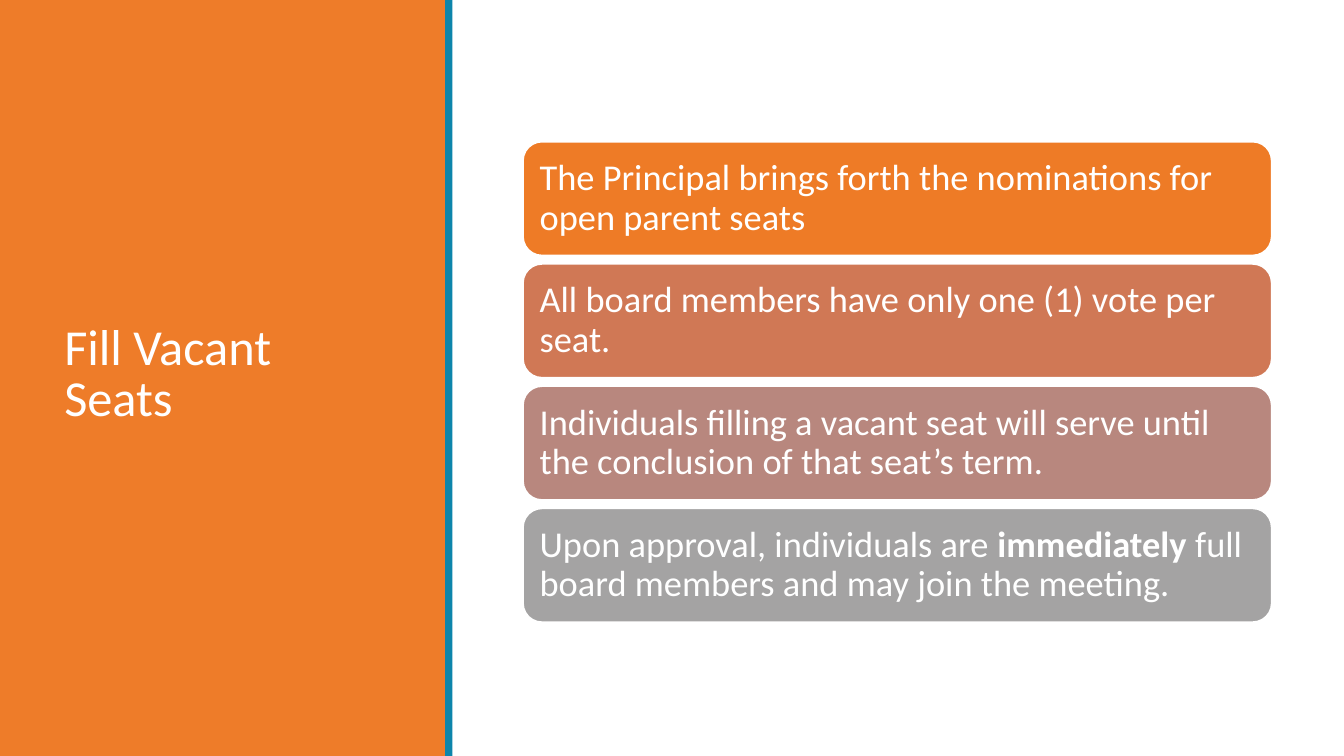
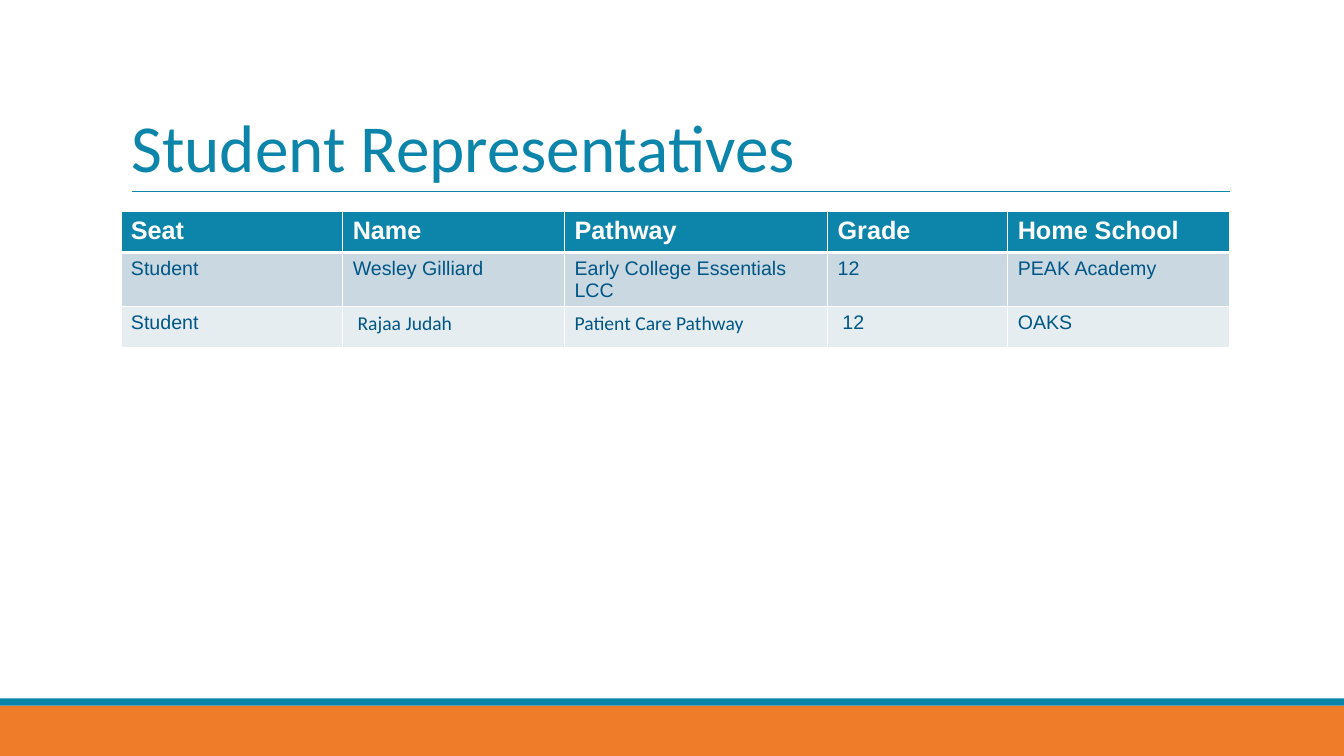
import pptx
import pptx.dml.color
import pptx.enum.shapes
import pptx.enum.text
import pptx.oxml
import pptx.oxml.ns
import pptx.util

Cm = pptx.util.Cm
Pt = pptx.util.Pt
Anchor = pptx.enum.text.MSO_ANCHOR
Shape = pptx.enum.shapes.MSO_SHAPE

SLIDE_WIDTH, SLIDE_HEIGHT = 33.87, 19.05
TITLE_ONLY = 5
COLORS = {
    "orange": "EE7C29",
    "teal": "0D85AB",
    "white": "FFFFFF",
    "table text": "005685",
    "dark row": "CAD8E2",
    "light row": "E6EDF1",
    "card 1": "EE7B26",
    "card 2": "D07855",
    "card 3": "B8877E",
    "card 4": "A4A3A3",
}


def rgb(name):
    return pptx.dml.color.RGBColor.from_string(COLORS[name])


def write_text(frame, text, size=18, color="white", font="Calibri", bold=False,
               spacing=1.0, anchor=Anchor.TOP, margins=(0.25, 0.13)):
    """Write one paragraph; words between asterisks are bold."""
    frame.word_wrap = True
    frame.vertical_anchor = anchor
    frame.margin_left = frame.margin_right = Cm(margins[0])
    frame.margin_top = frame.margin_bottom = Cm(margins[1])
    paragraph = frame.paragraphs[0]
    paragraph.alignment = pptx.enum.text.PP_ALIGN.LEFT
    paragraph.line_spacing = spacing
    for index, part in enumerate(text.split("*")):
        run = paragraph.add_run()
        run.text = part
        run.font.name = font
        run.font.size = Pt(size)
        run.font.bold = bold or index % 2 == 1
        run.font.color.rgb = rgb(color)


class Deck:
    """Holds the presentation, its style and the current slide."""

    def __init__(self):
        self.presentation = pptx.Presentation()
        self.presentation.slide_width = Cm(SLIDE_WIDTH)
        self.presentation.slide_height = Cm(SLIDE_HEIGHT)
        self.slide = None

    def new_slide(self):
        layout = self.presentation.slide_layouts[TITLE_ONLY]
        self.slide = self.presentation.slides.add_slide(layout)

    def title(self, text, box, size, color, anchor):
        shape = self.slide.shapes.title
        shape.left, shape.top, shape.width, shape.height = map(Cm, box)
        shape.text_frame.auto_size = pptx.enum.text.MSO_AUTO_SIZE.NONE
        write_text(shape.text_frame, text, size=size, color=color,
                   spacing=0.85, anchor=anchor)

    def block(self, box, fill, kind=Shape.RECTANGLE, line=None):
        shape = self.slide.shapes.add_shape(kind, *map(Cm, box))
        shape.shadow.inherit = False
        shape.fill.solid()
        shape.fill.fore_color.rgb = rgb(fill)
        if line:
            shape.line.color.rgb = rgb(line)
            shape.line.width = Pt(1.25)
        else:
            shape.line.fill.background()
        return shape

    def band(self, area, edge):
        """Draw an orange area with a teal edge, both behind the title."""
        for box, fill in ((area, "orange"), (edge, "teal")):
            shape = self.block(box, fill)
            self.slide.shapes.title._element.addprevious(shape._element)

    def card(self, text, box, fill):
        shape = self.block(box, fill, Shape.ROUNDED_RECTANGLE, "white")
        shape.adjustments[0] = 0.167
        write_text(shape.text_frame, text, size=26, spacing=0.9,
                   anchor=Anchor.MIDDLE, margins=(0.28, 0.28))

    def rule(self, left, right, top):
        line = self.slide.shapes.add_connector(
            pptx.enum.shapes.MSO_CONNECTOR.STRAIGHT,
            Cm(left), Cm(top), Cm(right), Cm(top))
        line.line.color.rgb = rgb("teal")
        line.line.width = Pt(0.75)
        properties = line._element.spPr
        properties.append(properties.makeelement(pptx.oxml.ns.qn("a:effectLst"), {}))

    def cell_borders(self, cell, **widths):
        properties = cell._tc.get_or_add_tcPr()
        for side in "LRTB":
            width = Pt(widths.get(side, 1))
            properties.append(pptx.oxml.parse_xml(
                f'<a:ln{side} {pptx.oxml.ns.nsdecls("a")} w="{width}"><a:solidFill>'
                f'<a:srgbClr val="{COLORS["white"]}"/></a:solidFill></a:ln{side}>'))

    def table(self, rows, left, top, widths, heights, special=None):
        """Draw a header row and banded rows; special holds formats by (row, column)."""
        table = self.slide.shapes.add_table(
            len(rows), len(widths), Cm(left), Cm(top),
            Cm(sum(widths)), Cm(sum(heights))).table
        for column, width in zip(table.columns, widths):
            column.width = Cm(width)
        for row, height in zip(table.rows, heights):
            row.height = Cm(height)
        header = {"size": 18, "bold": True}
        body = {"size": 14, "color": "table text"}
        edges = [{"B": 3}, {"T": 3}]
        for r, values in enumerate(rows):
            fill = "teal" if r == 0 else ("light row", "dark row")[r % 2]
            for c, value in enumerate(values):
                cell = table.cell(r, c)
                style = {"font": "Arial", **(body if r else header)}
                style.update((special or {}).get((r, c), {}))
                margins = style.pop("margins", (0.25, 0.13))
                write_text(cell.text_frame, value, **style)
                cell.margin_left, cell.margin_top = map(Cm, margins)
                self.cell_borders(cell, **(edges[r] if r < 2 else {}))
                cell.fill.solid()
                cell.fill.fore_color.rgb = rgb(fill)


def seats_slide(deck):
    deck.new_slide()
    # Side panel and title
    deck.band((0, 0, 11.25, SLIDE_HEIGHT), (11.22, 0, 0.18, SLIDE_HEIGHT))
    deck.title("Fill Vacant Seats", (1.37, 1.45, 8.56, 16.03), 36, "white",
               Anchor.MIDDLE)
    # Stacked cards
    cards = [
        "The Principal brings forth the nominations for open parent seats",
        "All board members have only one (1) vote per seat.",
        "Individuals filling a vacant seat will serve until the conclusion "
        "of that seat’s term.",
        "Upon approval, individuals are *immediately *full board members "
        "and may join the meeting.",
    ]
    top, pitch = 3.57, 3.08
    for index, text in enumerate(cards):
        deck.card(text, (13.18, top + index * pitch, 18.87, 2.87),
                  f"card {index + 1}")


def students_slide(deck):
    deck.new_slide()
    # Footer band, title and rule
    deck.band((0, 17.78, SLIDE_WIDTH, 1.27), (0, 17.6, SLIDE_WIDTH, 0.18))
    deck.title("Student Representatives", (3.06, 0.79, 27.94, 4.04), 48, "teal",
               Anchor.BOTTOM)
    deck.rule(3.33, 30.99, 4.83)
    # Representatives
    rows = [
        ("Seat", "Name", "Pathway", "Grade", "Home School"),
        ("Student", "Wesley Gilliard", "Early College Essentials LCC", "12",
         "PEAK Academy"),
        ("Student", "Rajaa Judah", "Patient Care Pathway", "12", "OAKS"),
    ]
    indent = {"margins": (0.37, 0.13)}
    deck.table(rows, 3.05, 5.33, (5.59, 5.59, 6.63, 4.54, 5.59),
               (1.03, 1.34, 1.03),
               special={(2, 1): {"font": "Calibri", **indent},
                        (2, 2): {"font": "Calibri"},
                        (2, 3): indent})


def main():
    deck = Deck()
    seats_slide(deck)
    students_slide(deck)
    deck.presentation.save("out.pptx")


if __name__ == "__main__":
    main()
